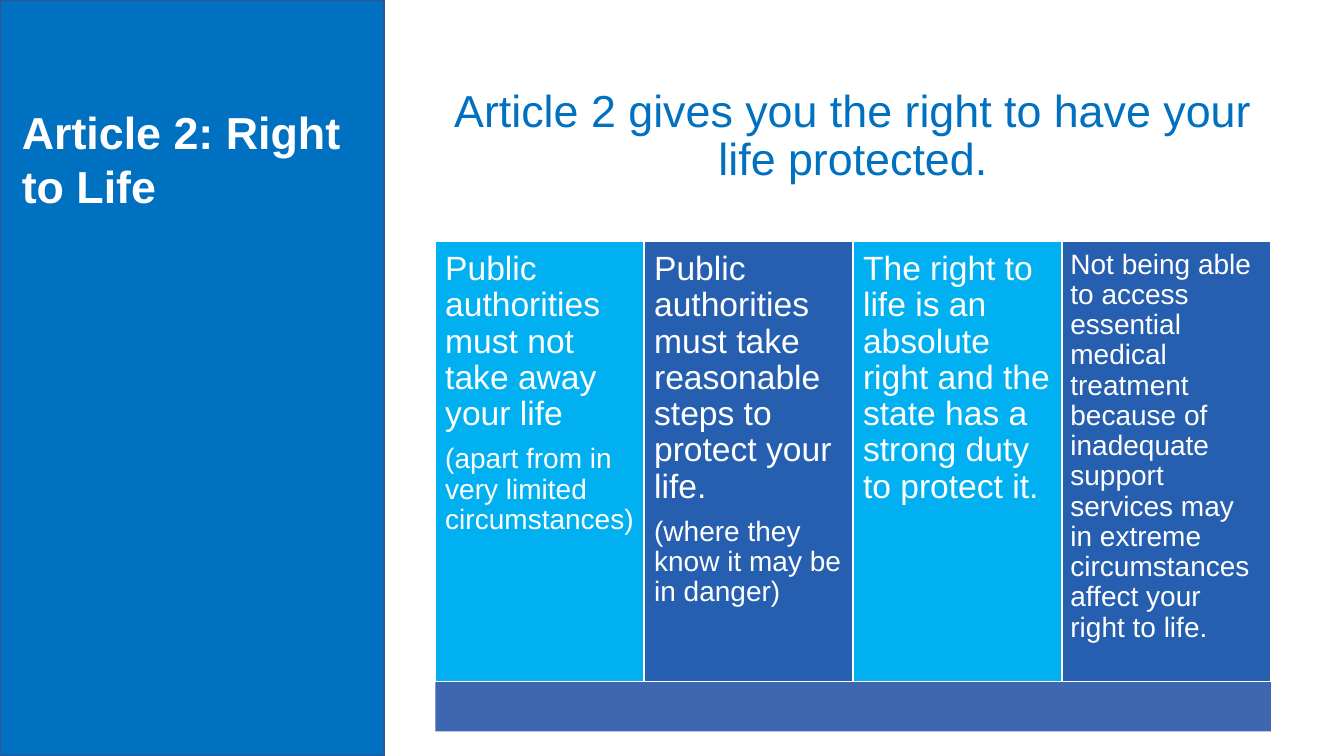
"""Builds the Article 2: Right to Life slide."""
import pptx
import pptx.util
import pptx.dml.color
import pptx.enum.shapes
import pptx.enum.text

Cm, Pt = pptx.util.Cm, pptx.util.Pt
ANCHOR, ALIGN = pptx.enum.text.MSO_ANCHOR, pptx.enum.text.PP_ALIGN

COLORS = {"sidebar": "0070C0", "sidebar_edge": "325491", "white": "FFFFFF",
          "light": "00B0F0", "dark": "275FB0", "base": "3E67B2"}
FONT = "Arial"

TITLE = [("Article 2: Right to Life", 32)]
HEADLINE = [("Article 2 gives you the right to have your life protected.", 32)]
COLUMNS = [
    [("Public authorities must not take away your life", 24),
     ("(apart from in very limited circumstances)", 20)],
    [("Public authorities must take reasonable steps to protect your life.", 24),
     ("(where they know it may be in danger)", 20)],
    [("The right to life is an absolute right and the state has a strong duty to protect it.", 24)],
    [("Not being able to access essential medical treatment because of inadequate "
      "support services may in extreme circumstances affect your right to life.", 20)],
]

SLIDE_WIDTH, SLIDE_HEIGHT, SIDEBAR_WIDTH = 33.87, 19.05, 9.68
LEFT, WIDTH = 10.97, 21.06
HEADLINE_TOP, HEADLINE_HEIGHT = 0.81, 5.28
COLUMN_HEIGHT, BASE_HEIGHT = 11.1, 1.24
COLUMN_TOP = HEADLINE_TOP + HEADLINE_HEIGHT
COLUMN_WIDTH = WIDTH / len(COLUMNS)


def rgb(name):
    return pptx.dml.color.RGBColor.from_string(COLORS[name])


def add_block(slide, box, fill, edge=None):
    block = slide.shapes.add_shape(pptx.enum.shapes.MSO_SHAPE.RECTANGLE, *map(Cm, box))
    block.shadow.inherit = False
    block.fill.solid()
    block.fill.fore_color.rgb = rgb(fill)
    if edge:
        block.line.color.rgb = rgb(edge)
        block.line.width = Pt(1)
    else:
        block.line.fill.background()
    return block


def write(frame, paragraphs, color, inset, align=ALIGN.LEFT, anchor=ANCHOR.TOP,
          bold=False, spacing=0.9, after=0.35):
    frame.word_wrap = True
    frame.vertical_anchor = anchor
    frame.margin_left = frame.margin_right = Cm(inset)
    frame.margin_top = frame.margin_bottom = Cm(inset)
    for index, (text, size) in enumerate(paragraphs):
        paragraph = frame.add_paragraph() if index else frame.paragraphs[0]
        paragraph.alignment = align
        paragraph.line_spacing = spacing
        paragraph.space_after = Pt(size * after)
        run = paragraph.add_run()
        run.text = text
        run.font.name, run.font.size, run.font.bold = FONT, Pt(size), bold
        run.font.color.rgb = rgb(color)


def main():
    deck = pptx.Presentation()
    deck.slide_width, deck.slide_height = Cm(SLIDE_WIDTH), Cm(SLIDE_HEIGHT)
    slide = deck.slides.add_slide(deck.slide_layouts[6])

    add_block(slide, (0, 0, SIDEBAR_WIDTH, SLIDE_HEIGHT), "sidebar", "sidebar_edge")
    title = slide.shapes.add_textbox(Cm(0.3), Cm(2.51), Cm(9.5), Cm(3))
    write(title.text_frame, TITLE, "white", 0.25, bold=True, spacing=1, after=0)
    title.text_frame.margin_top = title.text_frame.margin_bottom = Cm(0.13)

    headline = add_block(slide, (LEFT, HEADLINE_TOP, WIDTH, HEADLINE_HEIGHT), "white")
    write(headline.text_frame, HEADLINE, "sidebar", 0.34, ALIGN.CENTER, ANCHOR.MIDDLE)

    for index, paragraphs in enumerate(COLUMNS):
        box = (LEFT + index * COLUMN_WIDTH, COLUMN_TOP, COLUMN_WIDTH, COLUMN_HEIGHT)
        column = add_block(slide, box, ("light", "dark")[index % 2], "white")
        inset = 0.25 if paragraphs[0][1] == 24 else 0.21
        write(column.text_frame, paragraphs, "white", inset)

    add_block(slide, (LEFT, COLUMN_TOP + COLUMN_HEIGHT, WIDTH, BASE_HEIGHT), "base")
    deck.save("out.pptx")


if __name__ == "__main__":
    main()
